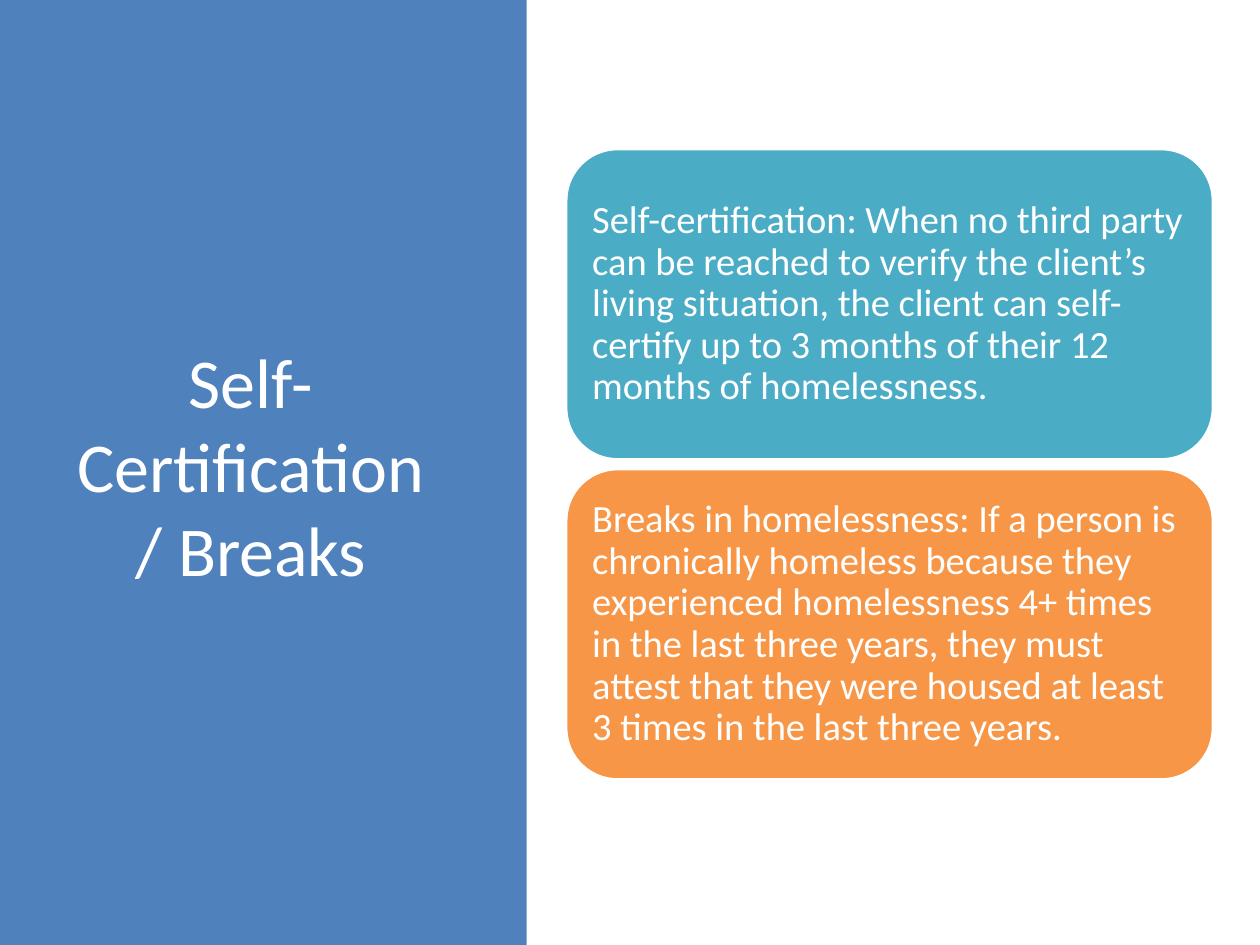
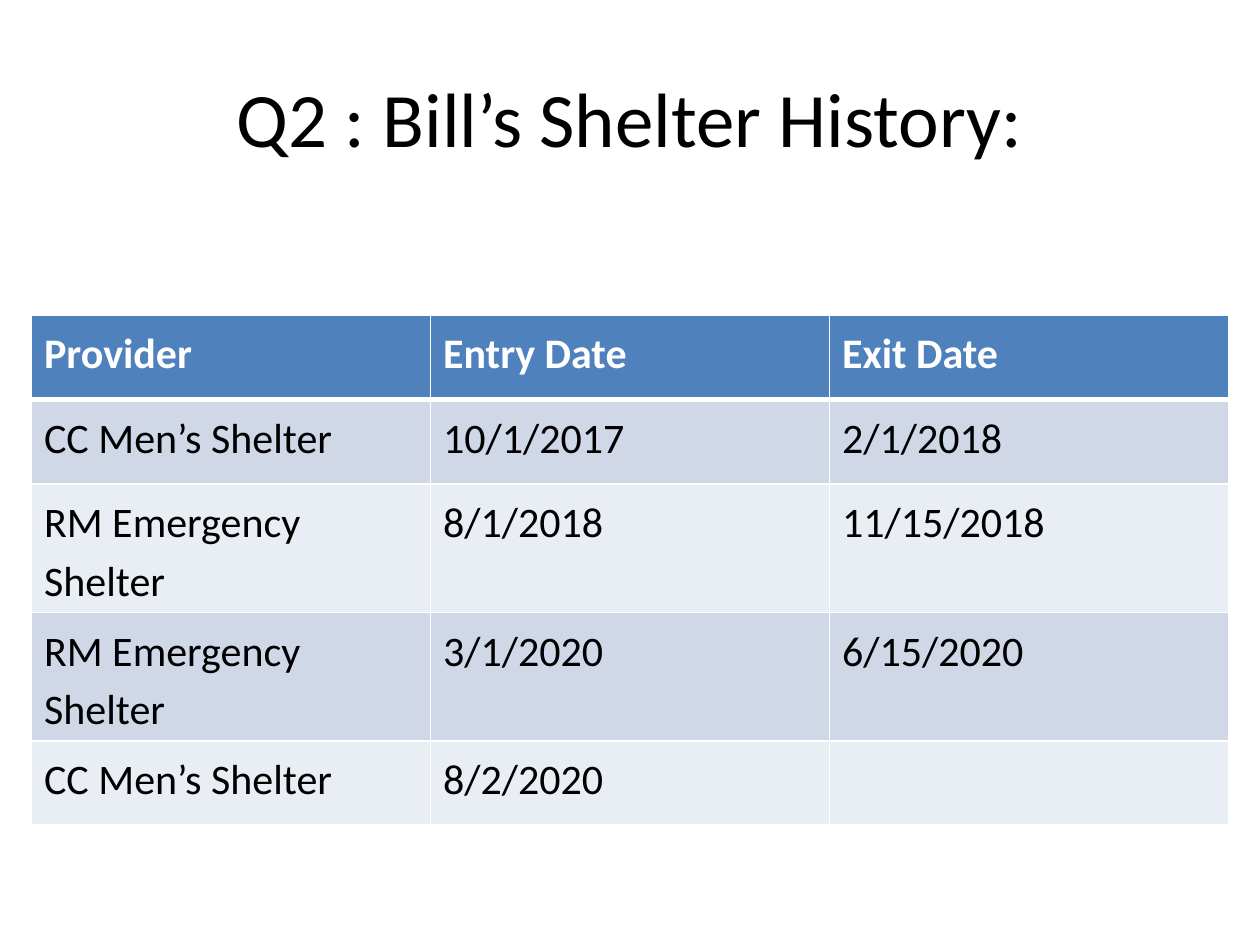
import pptx
import pptx.util
import pptx.dml.color
import pptx.enum.shapes
import pptx.enum.text
import pptx.oxml.ns
from lxml import etree

# Content
BREAKS_TITLE = "Self-Certification / Breaks"
RULES = [
    ("teal", "Self-certification: When no third party can be reached to verify the client’s "
             "living situation, the client can self-certify up to 3 months of their 12 months "
             "of homelessness."),
    ("orange", "Breaks in homelessness: If a person is chronically homeless because they "
               "experienced homelessness 4+ times in the last three years, they must attest "
               "that they were housed at least 3 times in the last three years."),
]
HISTORY_TITLE = "Q2 : Bill’s Shelter History:"
HISTORY = [
    ("Provider", "Entry Date", "Exit Date"),
    ("CC Men’s Shelter", "10/1/2017", "2/1/2018"),
    ("RM Emergency Shelter", "8/1/2018", "11/15/2018"),
    ("RM Emergency Shelter", "3/1/2020", "6/15/2020"),
    ("CC Men’s Shelter", "8/2/2020", ""),
]

# Shared style and grid, in inches
COLORS = {"blue": "4F81BD", "teal": "4BACC6", "orange": "F79646", "white": "FFFFFF",
          "black": "000000", "band": "D0D8E8", "pale": "E9EDF4"}
FONT = "Calibri"
WIDTH, HEIGHT = 10, 7.5
PANEL_WIDTH = 4.18
RULE_LEFT, RULE_TOP, RULE_WIDTH, RULE_HEIGHT, RULE_GAP = 4.49, 1.18, 5.14, 2.47, 0.07
TABLE_MARGIN, TABLE_TOP = 0.25, 2.5
ROW_HEIGHTS = [0.67, 0.67, 0.67, 0.76, 0.67]

MIDDLE = pptx.enum.text.MSO_ANCHOR.MIDDLE
CENTER = pptx.enum.text.PP_ALIGN.CENTER
LEFT = pptx.enum.text.PP_ALIGN.LEFT
SHAPES = pptx.enum.shapes.MSO_SHAPE


def color(name):
    return pptx.dml.color.RGBColor.from_string(COLORS[name])


def inches(*lengths):
    return [pptx.util.Inches(length) for length in lengths]


def write(frame, text, size, ink, align=LEFT, spacing=1.0, bold=False):
    frame.word_wrap = True
    para = frame.paragraphs[0]
    para.alignment = align
    para.line_spacing = spacing
    span = para.add_run()
    span.text = text
    span.font.name = FONT
    span.font.size = pptx.util.Pt(size)
    span.font.bold = bold
    span.font.color.rgb = color(ink)


def add_title(page, text, place, size, ink):
    frame = page.shapes.add_textbox(*inches(*place)).text_frame
    frame.vertical_anchor = MIDDLE
    write(frame, text, size, ink, CENTER)


def add_block(page, kind, place, fill):
    box = page.shapes.add_shape(kind, *inches(*place))
    box.shadow.inherit = False
    box.fill.solid()
    box.fill.fore_color.rgb = color(fill)
    box.line.fill.background()
    return box


def add_borders(cell, widths):
    properties = cell._tc.get_or_add_tcPr()
    for position, (side, width) in enumerate(widths.items()):
        line = etree.Element(pptx.oxml.ns.qn(f"a:ln{side}"), w=str(pptx.util.Pt(width)))
        fill = etree.SubElement(line, pptx.oxml.ns.qn("a:solidFill"))
        etree.SubElement(fill, pptx.oxml.ns.qn("a:srgbClr"), val=COLORS["white"])
        properties.insert(position, line)


def build_breaks(page):
    # Side panel with the title
    add_block(page, SHAPES.RECTANGLE, (0, 0, PANEL_WIDTH, HEIGHT), "blue")
    add_title(page, BREAKS_TITLE, (0.43, 0.68, 3.12, 6.02), 40, "white")
    # Stacked rule boxes
    for index, (fill, text) in enumerate(RULES):
        top = RULE_TOP + index * (RULE_HEIGHT + RULE_GAP)
        box = add_block(page, SHAPES.ROUNDED_RECTANGLE,
                        (RULE_LEFT, top, RULE_WIDTH, RULE_HEIGHT), fill)
        box.line.color.rgb = color("white")
        box.line.width = pptx.util.Pt(2)
        frame = box.text_frame
        frame.vertical_anchor = MIDDLE
        for side in ("left", "top", "right", "bottom"):
            setattr(frame, f"margin_{side}", pptx.util.Inches(0.09))
        write(frame, text, 22, "white", spacing=0.9)


def build_history(page):
    add_title(page, HISTORY_TITLE, (0.5, 0.3, 9, 1.25), 44, "black")
    # Shelter stays
    place = (TABLE_MARGIN, TABLE_TOP, WIDTH - 2 * TABLE_MARGIN, sum(ROW_HEIGHTS))
    table = page.shapes.add_table(len(HISTORY), len(HISTORY[0]), *inches(*place)).table
    for row, (height, stay) in enumerate(zip(ROW_HEIGHTS, HISTORY)):
        table.rows[row].height = pptx.util.Inches(height)
        header = row == 0
        fill = "blue" if header else "band" if row % 2 else "pale"
        borders = {"L": 1, "R": 1, "T": 3 if row == 1 else 1, "B": 3 if header else 1}
        for column, text in enumerate(stay):
            cell = table.cell(row, column)
            cell.fill.solid()
            cell.fill.fore_color.rgb = color(fill)
            add_borders(cell, borders)
            if text:
                write(cell.text_frame, text, 24, "white" if header else "black",
                      spacing=1.15, bold=header)


def main():
    deck = pptx.Presentation()
    deck.slide_width, deck.slide_height = inches(WIDTH, HEIGHT)
    for build in (build_breaks, build_history):
        build(deck.slides.add_slide(deck.slide_layouts[6]))
    deck.save("out.pptx")


if __name__ == "__main__":
    main()
